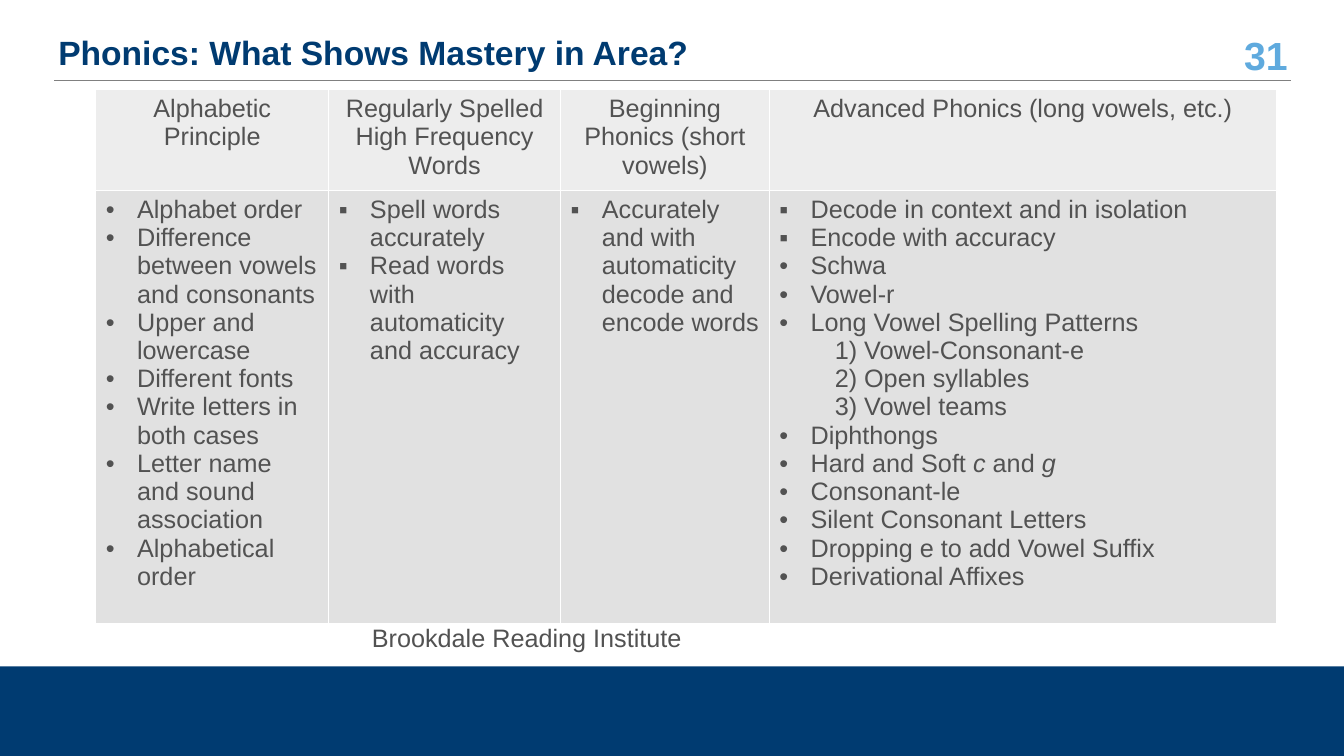
"""Build the phonics mastery slide with its four-column skills table."""
from lxml import etree
from pptx import Presentation
from pptx.dml.color import RGBColor
from pptx.enum.shapes import MSO_CONNECTOR, MSO_SHAPE
from pptx.enum.text import MSO_ANCHOR, PP_ALIGN
from pptx.oxml.ns import qn
from pptx.util import Inches, Pt

TITLE = "Phonics: What Shows Mastery in Area?"
PAGE_NUMBER = "31"
CREDIT = "Brookdale Reading Institute"
NAVY, SKY, INK = "003B71", "5FAADE", "525252"
HEADER_FILL, BODY_FILL = "EDEDED", "E1E1E1"

DOT, SQUARE, NUMBERED = "•", "▪", None
COLUMNS = [
    ("Alphabetic Principle", 2.31, [
        (DOT, "Alphabet order"),
        (DOT, "Difference between vowels and consonants"),
        (DOT, "Upper and lowercase"),
        (DOT, "Different fonts"),
        (DOT, "Write letters in both cases"),
        (DOT, "Letter name and sound association"),
        (DOT, "Alphabetical order"),
    ]),
    ("Regularly Spelled High Frequency Words", 2.3, [
        (SQUARE, "Spell words accurately"),
        (SQUARE, "Read words with automaticity and accuracy"),
    ]),
    ("Beginning Phonics (short vowels)", 2.07, [
        (SQUARE, "Accurately and with automaticity decode and encode words"),
    ]),
    ("Advanced Phonics (long vowels, etc.)", 5.03, [
        (SQUARE, "Decode in context and in isolation"),
        (SQUARE, "Encode with accuracy"),
        (DOT, "Schwa"),
        (DOT, "Vowel-r"),
        (DOT, "Long Vowel Spelling Patterns"),
        (NUMBERED, "1) Vowel-Consonant-e"),
        (NUMBERED, "2) Open syllables"),
        (NUMBERED, "3) Vowel teams"),
        (DOT, "Diphthongs"),
        (DOT, "Hard and Soft *c* and *g*"),
        (DOT, "Consonant-le"),
        (DOT, "Silent Consonant Letters"),
        (DOT, "Dropping e to add Vowel Suffix"),
        (DOT, "Derivational Affixes"),
    ]),
]
ROW_HEIGHTS = [0.92, 4.02]


def color(value):
    return RGBColor.from_string(value)


def style(paragraph, size, ink, bold=False, align=PP_ALIGN.LEFT):
    paragraph.alignment = align
    font = paragraph.font
    font.name, font.size, font.bold = "Arial", Pt(size), bold
    font.color.rgb = color(ink)


def add_text(slide, box, text, size, ink, bold=False, align=PP_ALIGN.LEFT,
             anchor=MSO_ANCHOR.MIDDLE):
    frame = slide.shapes.add_textbox(*map(Inches, box)).text_frame
    frame.word_wrap = True
    frame.vertical_anchor = anchor
    paragraph = frame.paragraphs[0]
    paragraph.text = text
    style(paragraph, size, ink, bold, align)


def set_indent(paragraph, bullet):
    properties = paragraph._p.get_or_add_pPr()
    left, first = (0.31, -0.31) if bullet else (0.55, 0)
    properties.set("marL", str(Inches(left)))
    properties.set("indent", str(Inches(first)))
    if bullet:
        etree.SubElement(properties, qn("a:buFont"), typeface="Arial")
        etree.SubElement(properties, qn("a:buChar"), char=bullet)
    else:
        etree.SubElement(properties, qn("a:buNone"))


def paint_cell(cell, fill):
    cell.fill.solid()
    cell.fill.fore_color.rgb = color(fill)
    properties = cell._tc.get_or_add_tcPr()
    for index, side in enumerate("LRTB"):
        line = etree.Element(qn(f"a:ln{side}"), w=str(Pt(1)))
        solid = etree.SubElement(line, qn("a:solidFill"))
        etree.SubElement(solid, qn("a:srgbClr"), val="FFFFFF")
        properties.insert(index, line)


def fill_skills(cell, skills):
    frame = cell.text_frame
    for index, (bullet, text) in enumerate(skills):
        paragraph = frame.add_paragraph() if index else frame.paragraphs[0]
        set_indent(paragraph, bullet)
        for part, words in enumerate(text.split("*")):
            if words:
                run = paragraph.add_run()
                run.text = words
                if part % 2:
                    run.font.italic = True
        style(paragraph, 18, INK)


def add_skills_table(slide):
    widths = [width for _, width, _ in COLUMNS]
    table = slide.shapes.add_table(
        2, len(COLUMNS), Inches(0.95), Inches(0.89),
        Inches(sum(widths)), Inches(sum(ROW_HEIGHTS))).table
    for row, height in zip(table.rows, ROW_HEIGHTS):
        row.height = Inches(height)
    for index, (heading, width, skills) in enumerate(COLUMNS):
        table.columns[index].width = Inches(width)
        header, body = table.cell(0, index), table.cell(1, index)
        paint_cell(header, HEADER_FILL)
        paint_cell(body, BODY_FILL)
        header.text = heading
        style(header.text_frame.paragraphs[0], 18, INK, align=PP_ALIGN.CENTER)
        fill_skills(body, skills)


def main():
    presentation = Presentation()
    presentation.slide_width, presentation.slide_height = Inches(13.33), Inches(7.5)
    slide = presentation.slides.add_slide(presentation.slide_layouts[6])

    band = slide.shapes.add_shape(
        MSO_SHAPE.RECTANGLE, *map(Inches, (0, 6.61, 13.33, 0.89)))
    band.shadow.inherit = False
    band.fill.solid()
    band.fill.fore_color.rgb = color(NAVY)
    band.line.fill.background()

    add_text(slide, (12.07, 0.33, 0.8, 0.42), PAGE_NUMBER, 28, SKY, True, PP_ALIGN.RIGHT)
    rule = slide.shapes.add_connector(
        MSO_CONNECTOR.STRAIGHT, *map(Inches, (0.54, 0.8, 12.8, 0.8)))
    rule.line.color.rgb = color("808080")
    rule.line.width = Pt(0.5)
    etree.SubElement(rule._element.spPr, qn("a:effectLst"))

    add_text(slide, (0.48, 0.31, 11.6, 0.42), TITLE, 24, NAVY, True)
    add_skills_table(slide)
    add_text(slide, (3.59, 6.12, 3.28, 0.4), CREDIT, 18, INK, anchor=MSO_ANCHOR.TOP)
    presentation.save("out.pptx")


if __name__ == "__main__":
    main()
